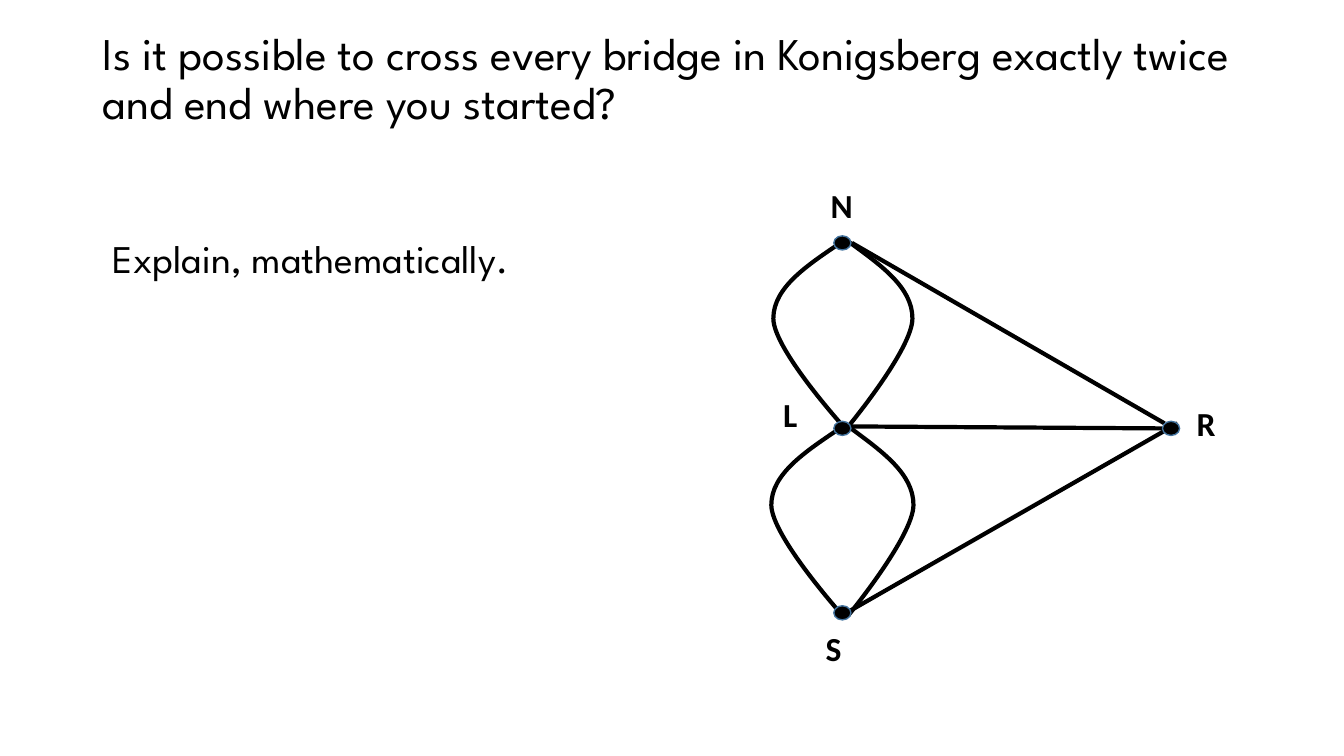
import pptx
import pptx.dml.color
import pptx.enum.shapes
import pptx.enum.text
import pptx.oxml
import pptx.oxml.ns
import pptx.util
from lxml import etree
from pptx.util import Inches

BLACK = pptx.dml.color.RGBColor(0x00, 0x00, 0x00)
NODE_EDGE = pptx.dml.color.RGBColor(0x43, 0x73, 0x9E)

QUESTION_FORMAT = {"name": "League Spartan", "size": pptx.util.Pt(32.4)}
PROMPT_FORMAT = {"name": "League Spartan", "size": pptx.util.Pt(28)}
LABEL_FORMAT = {"name": "Calibri", "size": pptx.util.Pt(24), "bold": True}

NODE_WIDTH, NODE_HEIGHT = 0.17, 0.14

# Land masses: top-left corner of each dot
LAND_DOTS = [(8.27, 2.34), (8.27, 4.18), (8.27, 6.01), (11.53, 4.18)]
# Land names: text, left, top, width
LAND_LABELS = [
    ("N", 8.14, 1.79, 0.33),
    ("S", 8.09, 6.18, 0.76),
    ("R", 11.77, 3.95, 0.76),
    ("L", 7.67, 3.86, 0.76),
]
# Curved bridges: start x, bulge x, end x, top
CURVED_BRIDGES = [
    (8.35, 7.67, 8.39, 2.4),
    (8.42, 9.05, 8.39, 2.4),
    (8.44, 9.06, 8.41, 4.25),
    (8.33, 7.65, 8.36, 4.25),
]
# Straight bridges: from x, from y, to x, to y
STRAIGHT_BRIDGES = [
    (8.45, 2.41, 11.55, 4.2),
    (8.35, 4.23, 11.53, 4.25),
    (8.36, 6.1, 11.68, 4.2),
]


def write_text(frame, text, formats, line_spacing=1.0, space_before=0):
    frame.word_wrap = True
    paragraph = frame.paragraphs[0]
    paragraph.alignment = pptx.enum.text.PP_ALIGN.LEFT
    paragraph.line_spacing = line_spacing
    paragraph.space_before = pptx.util.Pt(space_before)
    run = paragraph.add_run()
    run.text = text
    for attribute, value in formats.items():
        setattr(run.font, attribute, value)
    run.font.color.rgb = BLACK


def add_label(shapes, text, left, top, width, height, formats, **spacing):
    label = shapes.add_textbox(*map(Inches, (left, top, width, height)))
    write_text(label.text_frame, text, formats, **spacing)


def style_line(line, color=BLACK, width=3):
    line.color.rgb = color
    line.width = pptx.util.Pt(width)


def add_curved_bridge(shapes, start_x, bulge_x, end_x, top):
    bulge, end = (bulge_x, top + 0.76), (end_x, top + 1.86)
    outline = shapes.build_freeform(Inches(start_x), Inches(top))
    outline.add_line_segments(
        [tuple(map(Inches, point)) for point in (bulge, end)], close=False
    )
    bridge = outline.convert_to_shape()
    bridge.fill.background()
    bridge.shadow.inherit = False
    style_line(bridge.line)

    # Bend each straight segment into a cubic curve
    curves = [
        (((start_x + bulge_x) / 2, top + 0.23), (bulge_x, top + 0.45), bulge),
        ((bulge_x, top + 1.07), end, end),
    ]
    qn = pptx.oxml.ns.qn
    segments = list(bridge._element.iter(qn("a:lnTo")))
    for segment, controls in zip(segments, curves):
        bend = etree.Element(qn("a:cubicBezTo"))
        for x, y in controls:
            point = etree.SubElement(bend, qn("a:pt"))
            point.set("x", str(Inches(x) - bridge.left))
            point.set("y", str(Inches(y) - bridge.top))
        segment.getparent().replace(segment, bend)


def add_straight_bridge(shapes, *ends):
    bridge = shapes.add_connector(
        pptx.enum.shapes.MSO_CONNECTOR.STRAIGHT, *map(Inches, ends)
    )
    style_line(bridge.line)
    properties = bridge._element.spPr
    properties.append(
        pptx.oxml.parse_xml(f"<a:effectLst {pptx.oxml.ns.nsdecls('a')}/>")
    )


def add_land_dot(shapes, left, top):
    dot = shapes.add_shape(
        pptx.enum.shapes.MSO_SHAPE.OVAL,
        *map(Inches, (left, top, NODE_WIDTH, NODE_HEIGHT)),
    )
    dot.shadow.inherit = False
    dot.fill.solid()
    dot.fill.fore_color.rgb = BLACK
    style_line(dot.line, NODE_EDGE, 1)


def main():
    deck = pptx.Presentation()
    deck.slide_width, deck.slide_height = Inches(13.33), Inches(7.5)
    slide = deck.slides.add_slide(deck.slide_layouts[5])

    # Question, raised above the middle of its box by the bottom margin
    question = slide.shapes.title
    question.left, question.top = Inches(0.92), Inches(0.4)
    question.width, question.height = Inches(11.5), Inches(1.45)
    question.text_frame.vertical_anchor = pptx.enum.text.MSO_ANCHOR.MIDDLE
    question.text_frame.margin_bottom = Inches(0.71)
    write_text(
        question.text_frame,
        "Is it possible to cross every bridge in Konigsberg exactly twice "
        "and end where you started?",
        QUESTION_FORMAT,
        line_spacing=0.9,
    )

    # Prompt
    add_label(
        slide.shapes, "Explain, mathematically.", 1.02, 2.37, 4.33, 3.17,
        PROMPT_FORMAT, line_spacing=0.8, space_before=10,
    )

    # Bridge graph
    graph = slide.shapes.add_group_shape().shapes
    for curve in CURVED_BRIDGES:
        add_curved_bridge(graph, *curve)
    for ends in STRAIGHT_BRIDGES:
        add_straight_bridge(graph, *ends)
    for corner in LAND_DOTS:
        add_land_dot(graph, *corner)
    for text, left, top, width in LAND_LABELS:
        add_label(graph, text, left, top, width, 0.57, LABEL_FORMAT)

    deck.save("out.pptx")


if __name__ == "__main__":
    main()
